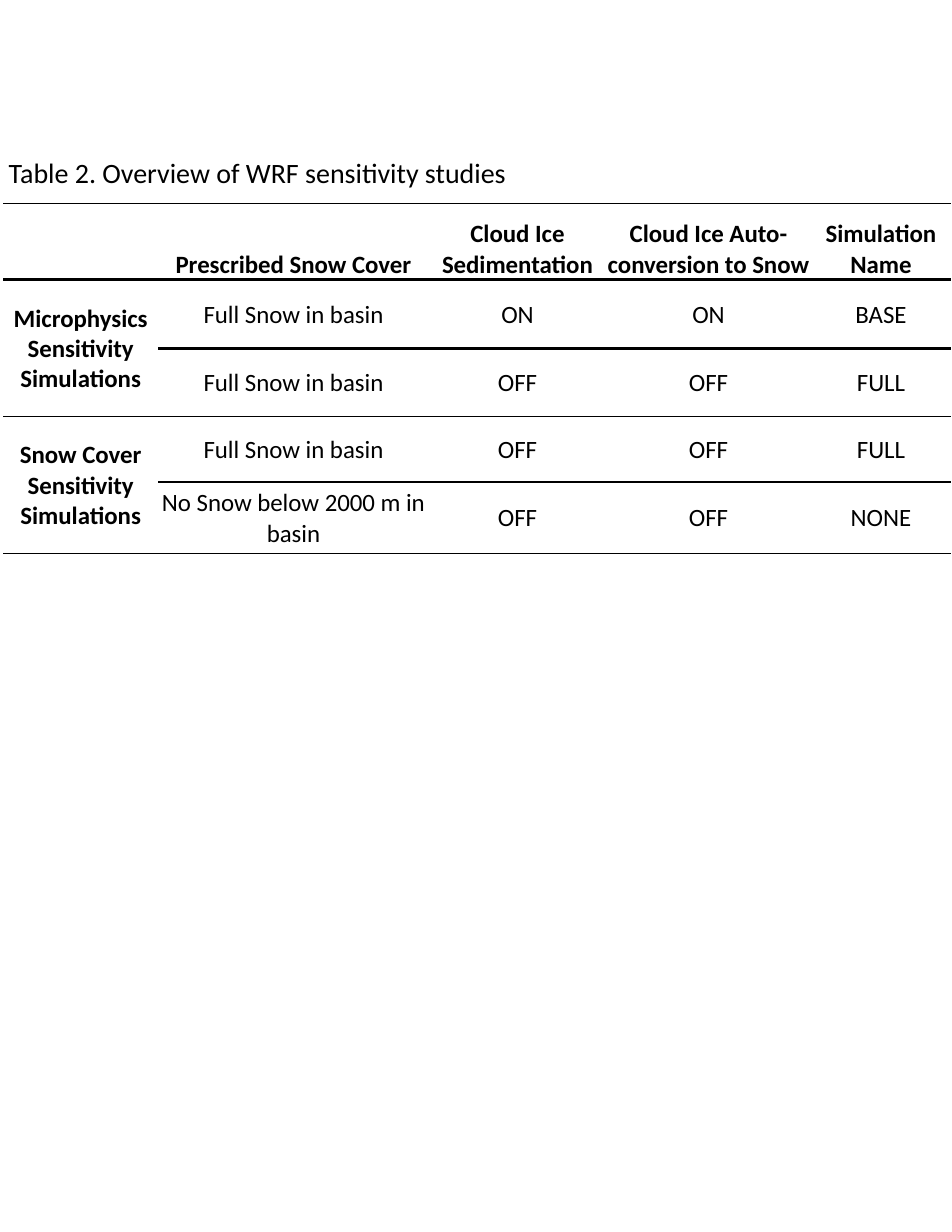
from lxml import etree
from pptx import Presentation
from pptx.dml.color import RGBColor
from pptx.enum import text
from pptx.oxml.ns import qn
from pptx.util import Pt

THEME = {
    "font": "Calibri",
    "ink": "000000",
    "title": Pt(18),
    "body": Pt(16),
    "thin": Pt(1),
    "thick": Pt(2.25),
}
NO_GRID = "{2D5ABB26-0587-4C30-8999-92F81FD0307C}"


def style_run(r, size, bold):
    for name, value in {"name": THEME["font"], "size": size, "bold": bold}.items():
        setattr(r.font, name, value)
    r.font.color.rgb = RGBColor.from_string(THEME["ink"])


def add_border(cell, side, width):
    tcPr = cell._tc.get_or_add_tcPr()
    ln = etree.SubElement(tcPr, qn(f"a:{side}"), w=str(width))
    fill = etree.SubElement(ln, qn("a:solidFill"))
    etree.SubElement(fill, qn("a:srgbClr"), val=THEME["ink"])


prs = Presentation()
prs.slide_width, prs.slide_height = Pt(612), Pt(792)
s = prs.slides.add_slide(prs.slide_layouts[5])

sp = s.shapes.title
sp.left, sp.top, sp.width, sp.height = Pt(-2), Pt(96), Pt(613), Pt(30)
tf = sp.text_frame
frame = {
    "word_wrap": True,
    "auto_size": text.MSO_AUTO_SIZE.NONE,
    "vertical_anchor": text.MSO_ANCHOR.TOP,
    "margin_left": Pt(7.6),
    "margin_right": Pt(7.6),
    "margin_top": Pt(4),
    "margin_bottom": Pt(4),
}
for name, value in frame.items():
    setattr(tf, name, value)
p = tf.paragraphs[0]
p.alignment = text.PP_ALIGN.LEFT
r = p.add_run()
r.text = "Table 2. Overview of WRF sensitivity studies"
style_run(r, THEME["title"], False)

rows = [
    ["", "Prescribed Snow Cover", "Cloud Ice Sedimentation",
     "Cloud Ice Auto-conversion to Snow", "Simulation Name"],
    ["Microphysics Sensitivity Simulations", "Full Snow in basin", "ON", "ON", "BASE"],
    ["", "Full Snow in basin", "OFF", "OFF", "FULL"],
    ["Snow Cover Sensitivity Simulations", "Full Snow in basin", "OFF", "OFF", "FULL"],
    ["", "No Snow below 2000 m in basin", "OFF", "OFF", "NONE"],
]
col_widths = [99.4, 174.2, 113.8, 131.8, 90]
row_heights = [49, 44, 44, 42, 46]
rules = [THEME[w] for w in ("thin", "thick", "thick", "thin", "thin", "thin")]

table = s.shapes.add_table(
    len(rows), len(col_widths), Pt(2.2), Pt(131),
    Pt(sum(col_widths)), Pt(sum(row_heights))).table
table.first_row = table.horz_banding = False
table._tbl.tblPr.find(qn("a:tableStyleId")).text = NO_GRID
for column, width in zip(table.columns, col_widths):
    column.width = Pt(width)
for row, height in zip(table.rows, row_heights):
    row.height = Pt(height)
for top in (1, 3):
    table.cell(top, 0).merge(table.cell(top + 1, 0))

for i, row in enumerate(rows):
    for j, label in enumerate(row):
        cell = table.cell(i, j)
        anchor = text.MSO_ANCHOR.MIDDLE if i else text.MSO_ANCHOR.BOTTOM
        layout = {
            "vertical_anchor": anchor,
            "margin_left": Pt(0.7),
            "margin_right": Pt(0.7),
            "margin_top": Pt(0.7),
            "margin_bottom": Pt(0),
        }
        for name, value in layout.items():
            setattr(cell, name, value)
        if j or i not in (2, 4):
            add_border(cell, "lnT", rules[i])
        if j or i not in (1, 3):
            add_border(cell, "lnB", rules[i + 1])
        cell.fill.background()
        if label:
            p = cell.text_frame.paragraphs[0]
            p.alignment = text.PP_ALIGN.CENTER
            r = p.add_run()
            r.text = label
            style_run(r, THEME["body"], i == 0 or j == 0)

for i in (1, 3):
    add_border(table.cell(i, 0), "lnB", THEME["thin"])
    tcPr = table.cell(i, 0)._tc.tcPr
    tcPr.insert(1, tcPr[-1])

prs.save("out.pptx")
